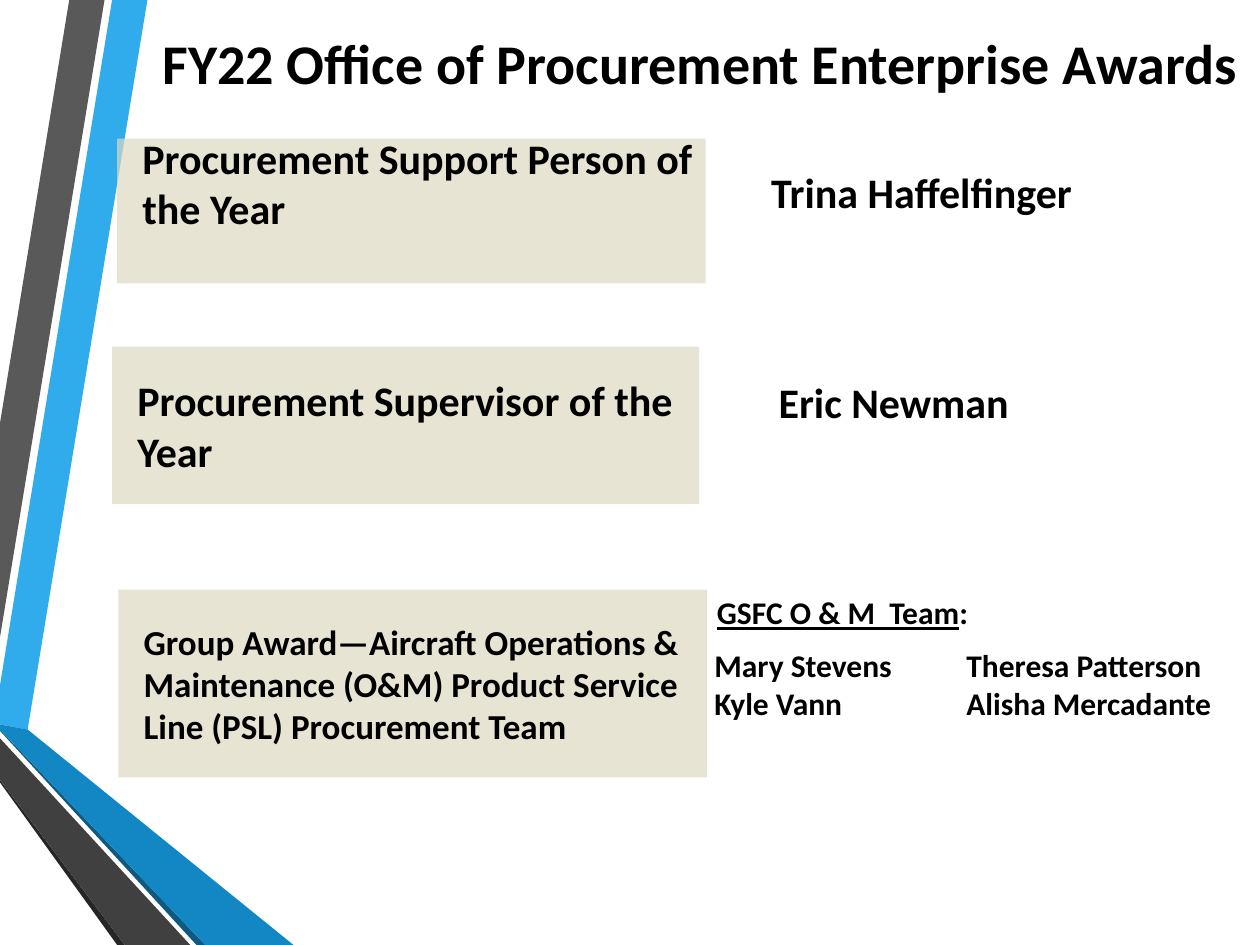
from dataclasses import dataclass

from lxml import etree
from pptx import Presentation
from pptx import util as u
from pptx.dml.color import RGBColor
from pptx.enum import shapes, text
from pptx.oxml.ns import qn

BLUE = RGBColor(0x30, 0xAC, 0xEC)
GRAY = RGBColor(0x59, 0x59, 0x59)
INK = RGBColor(0x26, 0x26, 0x26)
NAVY = RGBColor(0x0C, 0x5A, 0x82)
AZURE = RGBColor(0x12, 0x87, 0xC3)
COAL = RGBColor(0x40, 0x40, 0x40)
SAND = RGBColor(0xDD, 0xD9, 0xC3)
BLACK = RGBColor(0, 0, 0)

FONT = {"name": "Calibri", "bold": True}
FRAME = {"word_wrap": True, "vertical_anchor": text.MSO_ANCHOR.MIDDLE}


@dataclass(frozen=True)
class Band:
    color: RGBColor
    points: tuple


@dataclass(frozen=True)
class Label:
    words: str
    box: tuple
    size: int
    left: float = 0
    bottom: float = 0
    after: int = 6
    align: text.PP_ALIGN = text.PP_ALIGN.LEFT
    under: str = ""


BANDS = (
    Band(BLUE, ((0, 5.44), (0, 5.75), (0.22, 5.79), (1.17, 0), (0.89, 0))),
    Band(GRAY, ((0.83, 0), (0.55, 0), (0, 3.36), (0, 5.06))),
    Band(INK, ((0, 6.19), (0, 6.21), (0.93, 7.5), (0.99, 7.5))),
    Band(NAVY, ((0, 5.79), (0, 5.8), (1.56, 7.5), (1.63, 7.5))),
    Band(AZURE, ((0, 5.79), (1.63, 7.5), (2.33, 7.5), (0.22, 5.79), (0, 5.75))),
    Band(COAL, ((0, 6.19), (0.99, 7.5), (1.51, 7.5), (0, 5.86))),
)

AWARDS = (
    Label("Procurement Supervisor of the Year", (0.89, 2.75, 4.66, 1.25), 24, 0.2),
    Label("Procurement Support Person of the Year", (0.93, 1.1, 4.67, 1.15), 24, 0.2, 0.45),
    Label(
        "Group Award—Aircraft Operations & Maintenance (O&M) "
        "Product Service Line (PSL) Procurement Team",
        (0.94, 4.68, 4.67, 1.49), 20, 0.2,
    ),
)

NAMES = (
    Label("Trina Haffelfinger", (5.12, 1.33, 4.57, 0.38), 24, 1, after=8),
    Label("Eric Newman", (5.18, 2.71, 4.56, 0.96), 24, 1, after=0),
    Label(":", (5.19, 4.67, 4.55, 0.38), 18, 0.5, under="GSFC O & M  Team"),
    Label(
        "Mary Stevens\tTheresa Patterson\vKyle Vann\tAlisha Mercadante",
        (5.17, 5.06, 4.55, 0.74), 18, 0.5, after=8,
    ),
    Label(
        "FY22 Office of Procurement Enterprise Awards",
        (0.56, 0.36, 10, 0.74), 32, bottom=0.48, after=18, align=text.PP_ALIGN.CENTER,
    ),
)


def apply(item, values: dict) -> None:
    for key, value in values.items():
        setattr(item, key, value)


def paint(shape, color: RGBColor) -> None:
    shape.shadow.inherit = False
    shape.fill.solid()
    shape.fill.fore_color.rgb = color
    shape.line.fill.background()


def draw_band(slide, band: Band) -> None:
    first, *rest = [(u.Inches(x), u.Inches(y)) for x, y in band.points]
    form = slide.shapes.build_freeform(*first)
    form.add_line_segments(rest, close=True)
    paint(form.convert_to_shape(), band.color)


def write(shape, label: Label) -> None:
    frame = shape.text_frame
    apply(frame, FRAME | {
        "margin_left": u.Inches(label.left),
        "margin_right": 0,
        "margin_top": 0,
        "margin_bottom": u.Inches(label.bottom),
    })
    frame.text = label.under or label.words
    para = frame.paragraphs[0]
    apply(para, {"alignment": label.align, "space_after": u.Pt(label.after)})
    if label.under:
        para.runs[0].font.underline = True
        para.add_run().text = label.words
    if "\t" in label.words:
        tabs = etree.SubElement(para._p.get_or_add_pPr(), qn("a:tabLst"))
        etree.SubElement(tabs, qn("a:tab"), pos=str(u.Inches(2)), algn="l")
    for run in para.runs:
        apply(run.font, FONT | {"size": u.Pt(label.size)})
        run.font.color.rgb = BLACK


def draw_award(slide, label: Label) -> None:
    box = map(u.Inches, label.box)
    panel = slide.shapes.add_shape(shapes.MSO_SHAPE.RECTANGLE, *box)
    paint(panel, SAND)
    color = panel._element.spPr.find(qn("a:solidFill"))[0]
    etree.SubElement(color, qn("a:alpha"), val="70000")
    write(panel, label)


def draw_name(slide, label: Label) -> None:
    write(slide.shapes.add_textbox(*map(u.Inches, label.box)), label)


def main() -> None:
    deck = Presentation()
    apply(deck, {"slide_width": u.Inches(10), "slide_height": u.Inches(7.5)})
    slide = deck.slides.add_slide(deck.slide_layouts[6])
    for draw, items in ((draw_band, BANDS), (draw_award, AWARDS), (draw_name, NAMES)):
        for item in items:
            draw(slide, item)
    deck.save("out.pptx")


if __name__ == "__main__":
    main()
